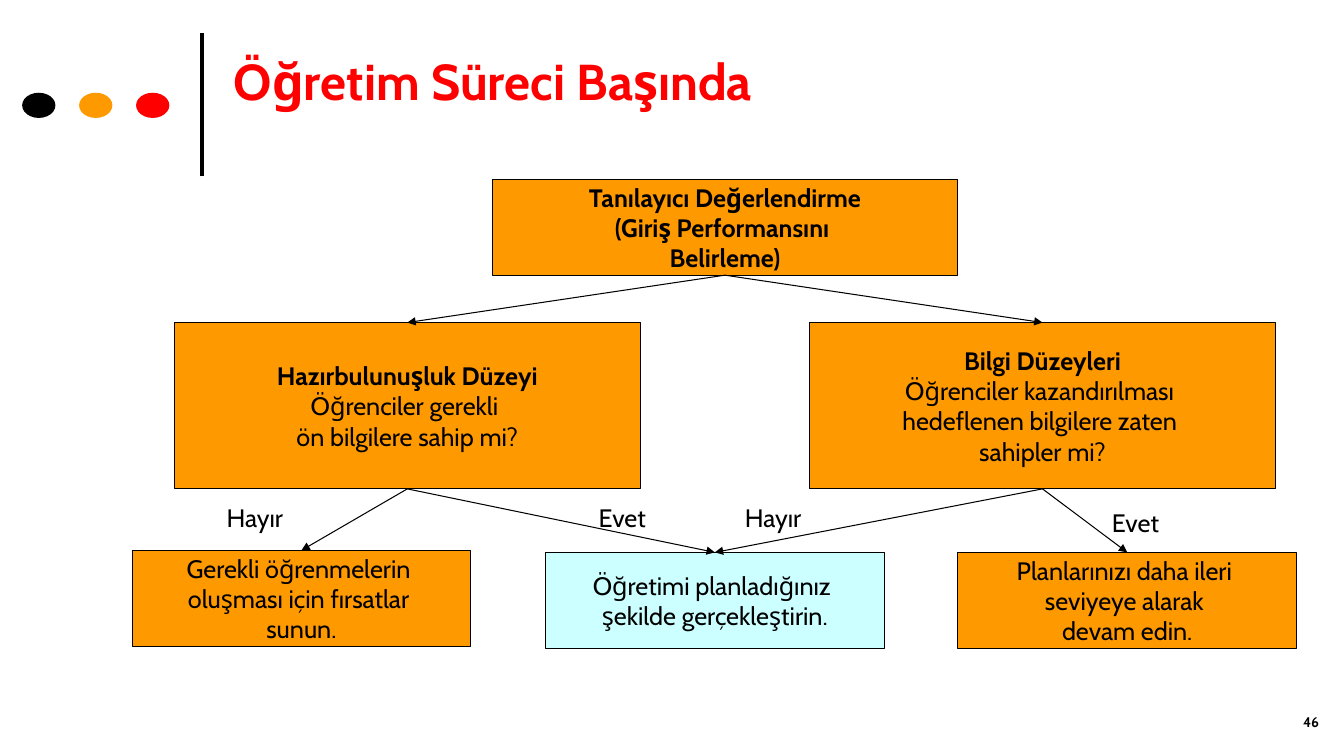
from dataclasses import dataclass

from lxml import etree
from pptx import Presentation
from pptx import util as u
from pptx.dml.color import RGBColor
from pptx.enum import shapes, text
from pptx.oxml.ns import qn


@dataclass(frozen=True)
class Theme:
    font: str = "Cabin"
    black: str = "000000"
    orange: str = "FF9900"
    red: str = "FF0000"
    aqua: str = "CCFFFF"
    title: int = 36
    body: int = 18
    small: int = 10
    thin: float = 0.75
    thick: float = 3


TOP, BOTTOM = 0, 2  # connection sites of a rectangle


class Deck:
    def __init__(self, theme):
        self.t = theme
        self.prs = Presentation()
        self.prs.slide_width = u.Inches(13.33)
        self.prs.slide_height = u.Inches(7.5)
        self.s = self.prs.slides.add_slide(self.prs.slide_layouts[6])

    def style(self, p, size, color, bold=False, align=text.PP_ALIGN.LEFT):
        p.alignment = align
        f = p.font
        f.name, f.size, f.bold = self.t.font, u.Pt(size), bold
        f.color.rgb = RGBColor.from_string(color)

    def shape(self, kind, at, fill):
        sp = self.s.shapes.add_shape(kind, *map(u.Inches, at))
        sp.shadow.inherit = False
        sp.fill.solid()
        sp.fill.fore_color.rgb = RGBColor.from_string(fill)
        return sp

    def dot(self, at, fill):
        self.shape(shapes.MSO_SHAPE.OVAL, at, fill).line.fill.background()

    def box(self, at, lines, fill, bold_lines=0):
        """Outlined rectangle, one paragraph per line, the first bold_lines in bold."""
        sp = self.shape(shapes.MSO_SHAPE.RECTANGLE, at, fill)
        sp.line.color.rgb = RGBColor.from_string(self.t.black)
        sp.line.width = u.Pt(self.t.thin)
        tf = sp.text_frame
        tf.word_wrap = False
        tf.vertical_anchor = text.MSO_ANCHOR.MIDDLE
        tf.text = "\n".join(lines)
        for i, p in enumerate(tf.paragraphs):
            self.style(p, self.t.body, self.t.black, i < bold_lines,
                       text.PP_ALIGN.CENTER)
        return sp

    def label(self, at, words, size, color, bold=False, wrap=True,
              align=text.PP_ALIGN.LEFT, anchor=text.MSO_ANCHOR.TOP):
        tf = self.s.shapes.add_textbox(*map(u.Inches, at)).text_frame
        tf.word_wrap = wrap
        tf.vertical_anchor = anchor
        tf.text = words
        self.style(tf.paragraphs[0], size, color, bold, align)

    def line(self, ends, width):
        c = self.s.shapes.add_connector(shapes.MSO_CONNECTOR.STRAIGHT,
                                        *map(u.Inches, ends))
        c.line.color.rgb = RGBColor.from_string(self.t.black)
        c.line.width = u.Pt(width)
        etree.SubElement(c._element.spPr, qn("a:effectLst"))
        return c

    def arrow(self, parent, child):
        """Arrow glued from the bottom of parent to the top of child."""
        c = self.line((0, 0, 1, 1), self.t.thin)
        c.begin_connect(parent, BOTTOM)
        c.end_connect(child, TOP)
        etree.SubElement(c.line._get_or_add_ln(), qn("a:tailEnd"), type="triangle")


def main():
    t = Theme()
    d = Deck(t)

    d.line((2, 1.75, 2, 0.33), t.thick)
    for i, color in enumerate((t.black, t.orange, t.red)):
        d.dot((0.22 + 0.565 * i, 0.92, 0.33, 0.25), color)
    d.label((2.22, 0.21, 10.22, 1.18), "Öğretim Süreci Başında", t.title, t.red,
            bold=True, anchor=text.MSO_ANCHOR.MIDDLE)
    d.label((11.29, 7.03, 1.89, 0.5), "46", t.small, t.black, bold=True,
            align=text.PP_ALIGN.RIGHT)

    diagnosis = d.box((4.88, 1.78, 4.62, 0.95), (
        "Tanılayıcı Değerlendirme", "(Giriş Performansını ", "Belirleme)"),
        t.orange, bold_lines=3)
    readiness = d.box((1.73, 3.2, 4.62, 1.65), (
        "Hazırbulunuşluk Düzeyi", "Öğrenciler gerekli ", "ön bilgilere sahip mi?"),
        t.orange, bold_lines=1)
    knowledge = d.box((8.03, 3.2, 4.62, 1.65), (
        "Bilgi Düzeyleri", "Öğrenciler kazandırılması ",
        "hedeflenen bilgilere zaten ", "sahipler mi?"), t.orange, bold_lines=1)
    prepare = d.box((1.31, 5.46, 3.36, 0.95), (
        "Gerekli öğrenmelerin ", "oluşması için fırsatlar ", "sunun."), t.orange)
    teach = d.box((5.41, 5.48, 3.36, 0.95), (
        "Öğretimi planladığınız ", "şekilde gerçekleştirin."), t.aqua)
    advance = d.box((9.5, 5.48, 3.36, 0.95), (
        "Planlarınızı daha ileri ", "seviyeye alarak ", "devam edin."), t.orange)

    for parent, child in ((diagnosis, readiness), (diagnosis, knowledge),
                          (readiness, prepare), (readiness, teach),
                          (knowledge, advance), (knowledge, teach)):
        d.arrow(parent, child)

    for left, top, width, answer in ((5.84, 4.93, 0.7, "Evet"),
                                     (10.93, 4.98, 0.7, "Evet"),
                                     (2.15, 4.93, 0.79, "Hayır"),
                                     (7.29, 4.93, 0.79, "Hayır")):
        d.label((left, top, width, 0.4), answer, t.body, t.black, wrap=False)

    d.prs.save("out.pptx")


if __name__ == "__main__":
    main()
